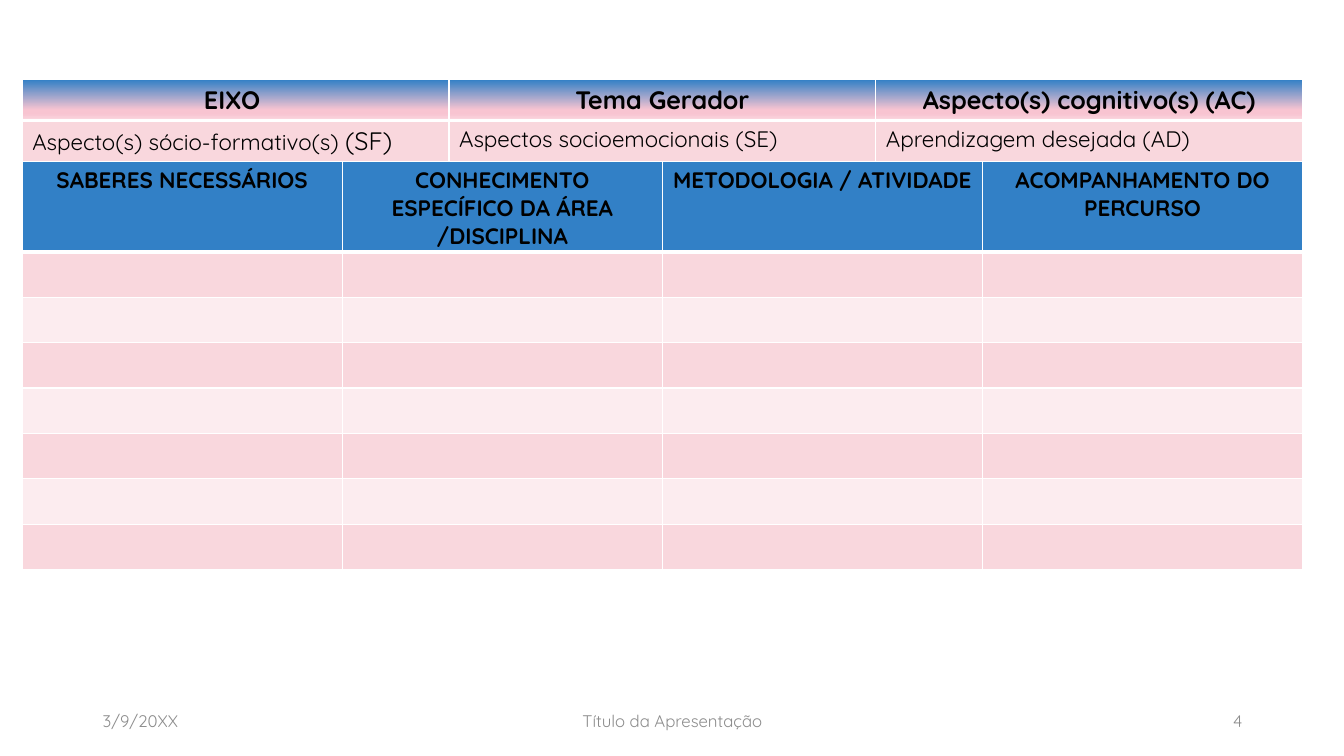
import pptx
import pptx.dml.color
import pptx.enum.text
import pptx.oxml
import pptx.oxml.ns
import pptx.util
from pptx.util import Inches

COLORS = {"blue": "3280C6", "pink": "F8C4D1", "soft": "FAD8E0", "band": "F9D7DD",
          "pale": "FCECEF", "line": "FFFFFF", "ink": "000000", "footer": "8C8C8C"}
FONT = "Quicksand"
ALIGN = pptx.enum.text.PP_ALIGN
LEFT, WIDTH = 0.22, 12.7
HEADER_STOPS = [(0, "blue"), (74, "pink"), (83, "pink"), (100, "soft")]


def add_run(paragraph, text, size, color="ink", bold=False):
    run = paragraph.add_run()
    run.text = text
    run.font.name = FONT
    run.font.size = pptx.util.Pt(size)
    run.font.bold = bold
    run.font.color.rgb = pptx.dml.color.RGBColor.from_string(COLORS[color])


def style_cell(cell, fill, bottom=1):
    """White borders, then a plain fill or the header gradient."""
    ns = pptx.oxml.ns.nsdecls("a")
    properties = cell._tc.get_or_add_tcPr()
    for side, points in (("L", 1), ("R", 1), ("T", 1), ("B", bottom)):
        properties.append(pptx.oxml.parse_xml(
            f'<a:ln{side} {ns} w="{points * 12700}"><a:solidFill>'
            f'<a:srgbClr val="{COLORS["line"]}"/></a:solidFill></a:ln{side}>'))
    if fill == "gradient":
        stops = "".join(f'<a:gs pos="{pos * 1000}"><a:srgbClr val="{COLORS[name]}"/></a:gs>'
                        for pos, name in HEADER_STOPS)
        properties.append(pptx.oxml.parse_xml(
            f'<a:gradFill {ns}><a:gsLst>{stops}</a:gsLst><a:lin ang="5400000"/></a:gradFill>'))
    else:
        cell.fill.solid()
        cell.fill.fore_color.rgb = pptx.dml.color.RGBColor.from_string(COLORS[fill])


presentation = pptx.Presentation()
presentation.slide_width = Inches(13.33)
presentation.slide_height = Inches(7.5)
slide = presentation.slides.add_slide(presentation.slide_layouts[6])

# Footer: date, presentation title, page number
for left, width, align, text in [
    (0.92, 3, ALIGN.LEFT, "3/9/20XX"),
    (4.42, 4.5, ALIGN.CENTER, "Título da Apresentação"),
    (9.42, 3, ALIGN.RIGHT, "4"),
]:
    footer = slide.shapes.add_textbox(Inches(left), Inches(6.95), Inches(width), Inches(0.4))
    footer.text_frame.word_wrap = True
    footer.text_frame.vertical_anchor = pptx.enum.text.MSO_ANCHOR.MIDDLE
    paragraph = footer.text_frame.paragraphs[0]
    paragraph.alignment = align
    add_run(paragraph, text, 12, "footer")

# Axis table: headings over their aspects
axes = ["EIXO ", "Tema Gerador", "Aspecto(s) cognitivo(s) (AC)"]
aspects = [
    [("Aspecto(s) sócio-formativo(s) ", 16), ("(SF)", 18)],
    [("Aspectos socioemocionais (SE)", 16)],
    [("Aprendizagem desejada (AD)", 16)],
]
axis_table = slide.shapes.add_table(
    2, len(axes), Inches(LEFT), Inches(0.79), Inches(WIDTH), Inches(0.81)).table
for column, (axis, aspect) in enumerate(zip(axes, aspects)):
    heading = axis_table.cell(0, column)
    style_cell(heading, "gradient", bottom=3)
    paragraph = heading.text_frame.paragraphs[0]
    paragraph.alignment = ALIGN.CENTER
    add_run(paragraph, axis, 18, bold=True)

    detail = axis_table.cell(1, column)
    style_cell(detail, "band")
    for text, size in aspect:
        add_run(detail.text_frame.paragraphs[0], text, size)

# Planning table: headings over seven banded rows to fill in
plan_headings = ["SABERES NECESSÁRIOS", "CONHECIMENTO ESPECÍFICO DA ÁREA /DISCIPLINA",
                 "METODOLOGIA / ATIVIDADE ", "ACOMPANHAMENTO DO PERCURSO"]
plan_table = slide.shapes.add_table(
    8, len(plan_headings), Inches(LEFT), Inches(1.6), Inches(WIDTH), Inches(4.03)).table
for row_number, row in enumerate(plan_table.rows):
    row.height = Inches(0.45 if row_number else 0.81)
    for cell, title in zip(row.cells, plan_headings):
        if row_number:
            style_cell(cell, "band" if row_number % 2 else "pale")
        else:
            style_cell(cell, "blue", bottom=3)
            paragraph = cell.text_frame.paragraphs[0]
            paragraph.alignment = ALIGN.CENTER
            add_run(paragraph, title, 16, bold=True)

presentation.save("out.pptx")
